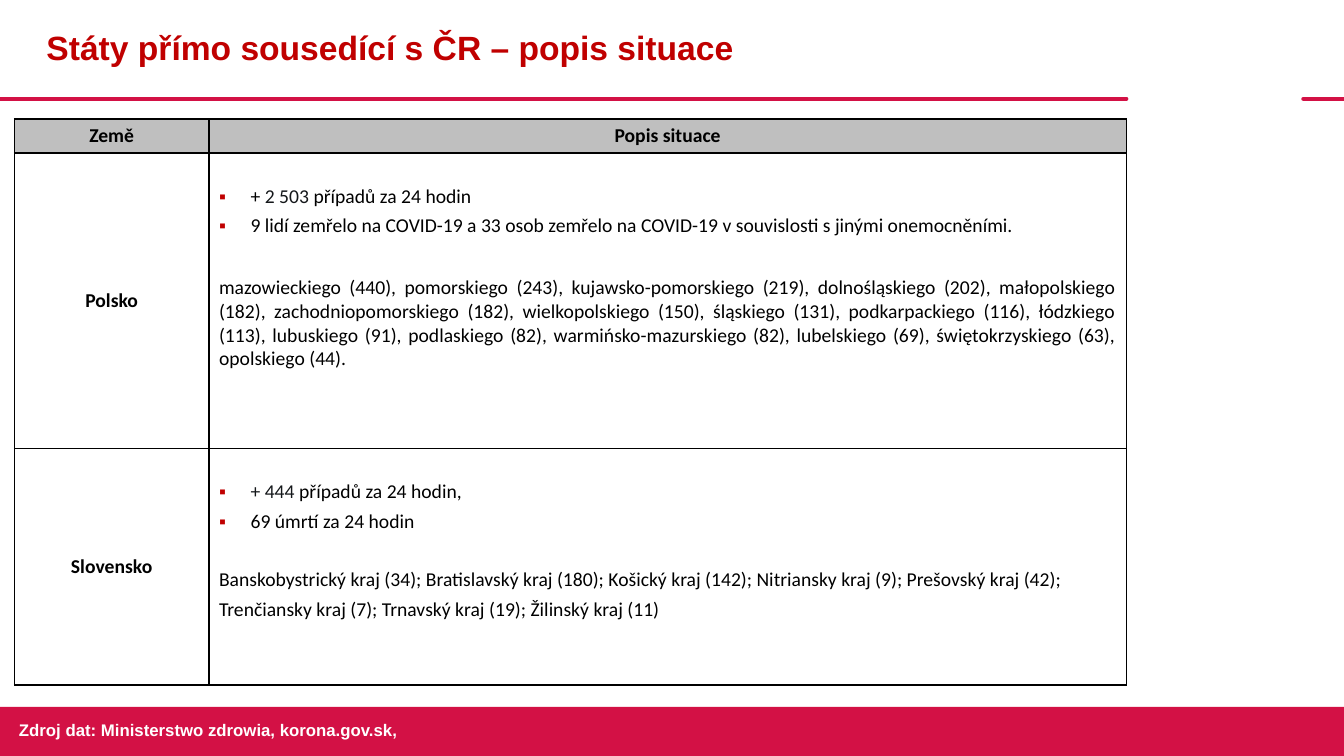
from lxml.etree import SubElement
from pptx import Presentation
from pptx.dml.color import RGBColor
from pptx.enum.shapes import MSO_CONNECTOR as Connector, MSO_SHAPE as Shape
from pptx.enum.text import MSO_ANCHOR as Anchor, MSO_AUTO_SIZE as AutoSize, PP_ALIGN as Align
from pptx.oxml import parse_xml
from pptx.oxml.ns import nsdecls, qn
from pptx.util import Pt

WIDTH, HEIGHT = 960, 540
CRIMSON, RED, BLACK, INK = "D31145", "C00000", "000000", "14171A"
LINE, AFTER = 15, 6
BLOCK_GAP = LINE + AFTER

COUNTRIES = [
    ("Polsko", 211, [
        [("+ ", BLACK), ("2 503 ", INK), ("případů za 24 hodin", BLACK)],
        [("9 lidí zemřelo na COVID-19 a 33 osob zemřelo na COVID-19 v souvislosti "
          "s jinými onemocněními.", BLACK)],
    ], [
        "mazowieckiego (440), pomorskiego (243), kujawsko-pomorskiego (219), dolnośląskiego (202), "
        "małopolskiego (182), zachodniopomorskiego (182), wielkopolskiego (150), śląskiego (131), "
        "podkarpackiego (116), łódzkiego (113), lubuskiego (91), podlaskiego (82), "
        "warmińsko-mazurskiego (82), lubelskiego (69), świętokrzyskiego (63), opolskiego (44).",
    ], None),
    ("Slovensko", 169, [
        [("+ 444 ", INK), ("případů za 24 hodin,", BLACK)],
        [("69 úmrtí za 24 hodin", BLACK)],
    ], [
        "Banskobystrický kraj (34); Bratislavský kraj (180); Košický kraj (142); "
        "Nitriansky kraj (9); Prešovský kraj (42);",
        "Trenčiansky kraj (7); Trnavský kraj (19); Žilinský kraj (11)",
    ], Pt(LINE)),
]


def color(value):
    """Turn a hex string into a colour."""
    return RGBColor.from_string(value)


def add_span(para, text, size, font, shade, bold=False):
    """Add one formatted run to a paragraph."""
    span = para.add_run()
    span.text = text
    span.font.size, span.font.name, span.font.bold = Pt(size), font, bold
    span.font.color.rgb = color(shade)


def add_rule(page, left, right, top):
    """Draw a horizontal crimson line with round ends."""
    rule = page.shapes.add_connector(Connector.STRAIGHT, Pt(left), Pt(top), Pt(right), Pt(top))
    rule.line.color.rgb = color(CRIMSON)
    rule.line.width = Pt(3)
    properties = rule._element.spPr
    properties.find(qn("a:ln")).set("cap", "rnd")
    SubElement(properties, qn("a:effectLst"))


def add_header(page, left, top, width, height):
    """Place the title and the broken line under it."""
    add_rule(page, 0, left + width, top + height)
    add_rule(page, 931, WIDTH, top + height)
    title = page.shapes.title
    title.left, title.top, title.width, title.height = Pt(left), Pt(top), Pt(width), Pt(height)
    frame = title.text_frame
    frame.auto_size, frame.vertical_anchor = AutoSize.NONE, Anchor.MIDDLE
    para = frame.paragraphs[0]
    para.alignment, para.line_spacing = Align.LEFT, 0.9
    add_span(para, "Státy přímo sousedící s ČR – popis situace", 24, "Arial", RED, True)


def add_footer(page, left, top, width, height):
    """Place the crimson band and the data source on it."""
    band = page.shapes.add_shape(Shape.RECTANGLE, Pt(left), Pt(top), Pt(width), Pt(height))
    band.shadow.inherit = False
    band.fill.solid()
    band.fill.fore_color.rgb = color(CRIMSON)
    band.line.fill.background()
    box = page.shapes.add_textbox(Pt(left + 6.5), Pt(top + 5.5), Pt(609), Pt(22))
    box.text_frame.word_wrap = True
    add_span(box.text_frame.paragraphs[0], "Zdroj dat: Ministerstwo zdrowia, korona.gov.sk,",
             12, "Arial", "FFFFFF", True)


def format_cell(cell, fill=None):
    """Set the fill and the black borders of a cell."""
    if fill:
        cell.fill.solid()
        cell.fill.fore_color.rgb = color(fill)
    else:
        cell.fill.background()
    for index, side in enumerate(("lnL", "lnR", "lnT", "lnB")):
        border = parse_xml(f'<a:{side} {nsdecls("a")} w="12700"><a:solidFill>'
                           f'<a:srgbClr val="{BLACK}"/></a:solidFill></a:{side}>')
        cell._tc.get_or_add_tcPr().insert(index, border)


def add_label(cell, text):
    """Write a centred bold label in a cell."""
    cell.vertical_anchor = Anchor.MIDDLE
    para = cell.text_frame.paragraphs[0]
    para.alignment = Align.CENTER
    add_span(para, text, 14, "Calibri", BLACK, True)


def add_bullet(para):
    """Give a paragraph a red square bullet with a hanging indent."""
    properties = para._p.get_or_add_pPr()
    properties.set("marL", str(Pt(22.5)))
    properties.set("indent", str(-Pt(22.5)))
    shade = SubElement(properties, qn("a:buClr"))
    SubElement(shade, qn("a:srgbClr"), val=RED)
    SubElement(properties, qn("a:buFont"), typeface="Arial")
    SubElement(properties, qn("a:buChar"), char="▪")


def add_situation(cell, bullets, regions, region_spacing):
    """Write the bullets and, after a gap, the regional counts."""
    cell.margin_top = Pt(3.6 + BLOCK_GAP)
    frame = cell.text_frame
    lines = bullets + [[(text, BLACK)] for text in regions]
    for index, spans in enumerate(lines):
        para = frame.add_paragraph() if index else frame.paragraphs[0]
        is_bullet = index < len(bullets)
        if is_bullet:
            add_bullet(para)
        para.alignment = Align.JUSTIFY
        para.line_spacing = Pt(LINE) if is_bullet else region_spacing
        para.space_after = Pt(AFTER)
        if index == len(bullets):
            para.space_before = Pt(BLOCK_GAP)
        for text, shade in spans:
            add_span(para, text, 14, "Calibri", shade)


def add_country_table(page, left, top, widths, header_height):
    """Build the table with one row for each country."""
    heights = [header_height] + [country[1] for country in COUNTRIES]
    table = page.shapes.add_table(len(heights), len(widths), Pt(left), Pt(top),
                                  Pt(sum(widths)), Pt(sum(heights))).table
    table.first_row = table.horz_banding = False
    for column, width in zip(table.columns, widths):
        column.width = Pt(width)
    for row, height in zip(table.rows, heights):
        row.height = Pt(height)
    for index, heading in enumerate(("Země", "Popis situace")):
        format_cell(table.cell(0, index), "BFBFBF")
        add_label(table.cell(0, index), heading)
    for index, (name, _, bullets, regions, spacing) in enumerate(COUNTRIES, 1):
        label, situation = table.cell(index, 0), table.cell(index, 1)
        format_cell(label)
        format_cell(situation)
        add_label(label, name)
        add_situation(situation, bullets, regions, spacing)


def main():
    """Build the slide and save it."""
    deck = Presentation()
    deck.slide_width, deck.slide_height = Pt(WIDTH), Pt(HEIGHT)
    page = deck.slides.add_slide(deck.slide_layouts[5])
    add_header(page, 26, 0, 778.5, 70.5)
    add_footer(page, 0, 505, WIDTH, 35)
    add_country_table(page, 10.3, 85, (139, 655.3), 24.3)
    deck.save("out.pptx")


if __name__ == "__main__":
    main()
